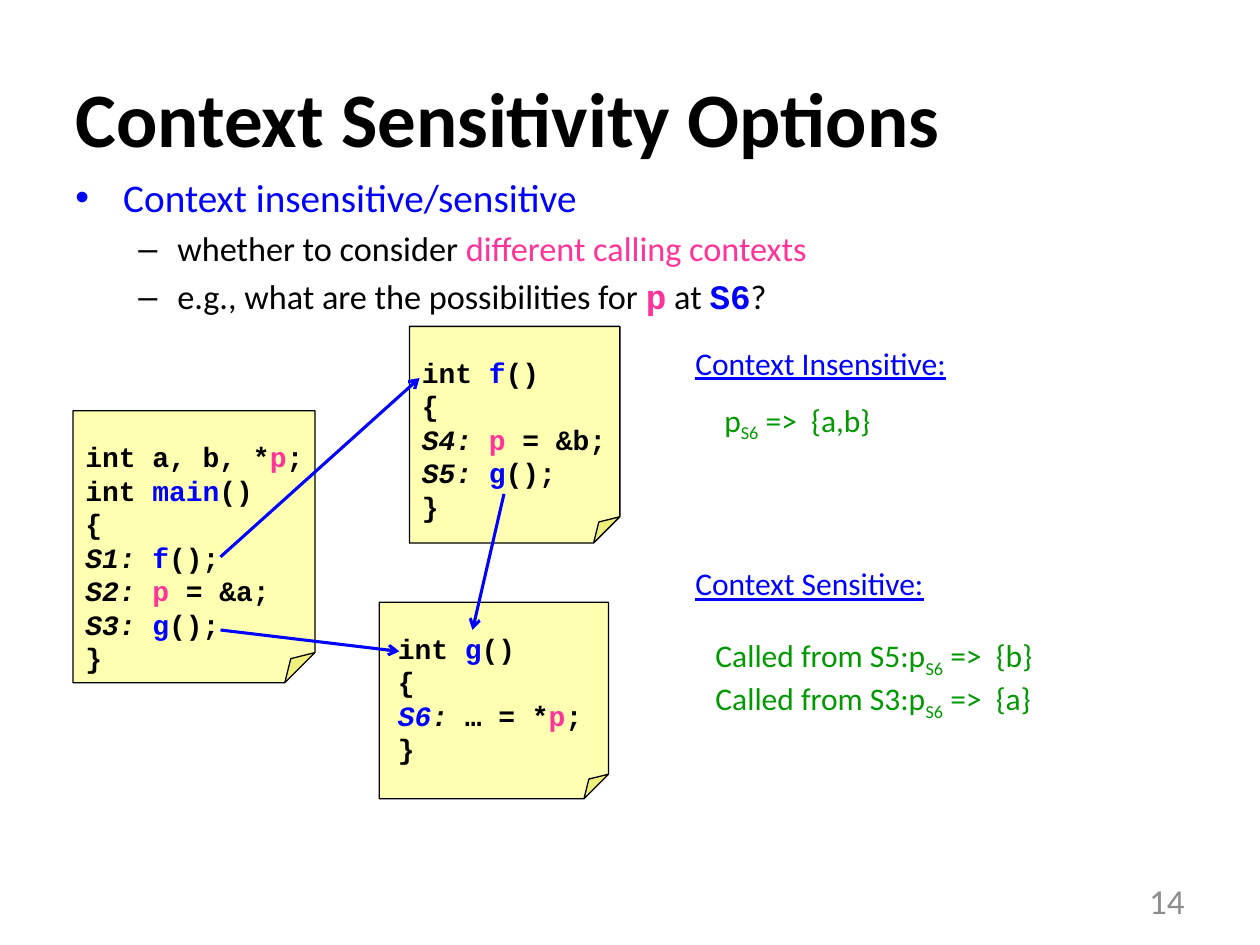
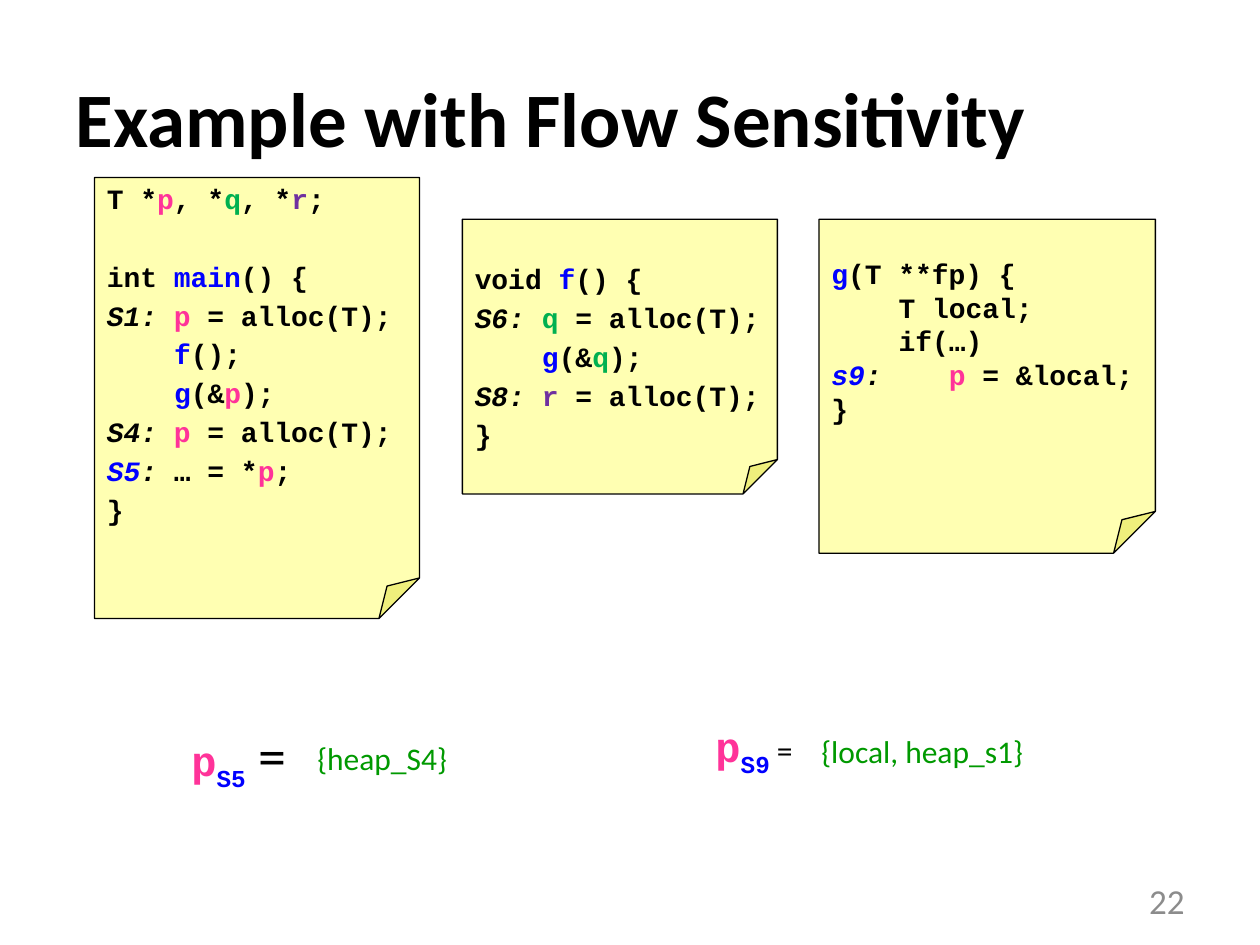
from lxml.etree import SubElement
from pptx import Presentation
from pptx.dml.color import RGBColor
from pptx.enum.shapes import MSO_CONNECTOR, MSO_SHAPE
from pptx.enum.text import MSO_ANCHOR, MSO_AUTO_SIZE, PP_ALIGN
from pptx.oxml.ns import qn
from pptx.util import Inches, Pt

WIDE, HIGH = Inches(10), Inches(7.5)
COLS, ROWS = 100, 75
SANS, MONO = "Calibri", "Courier New"
BLACK, BLUE, PINK, GREEN = "000000", "0000FF", "FF3399", "009900"
CODE = 16
PITCH = 19.3
CHAR = 0.6 * CODE

TONES = {
    "k": {"hue": BLACK},
    "b": {"hue": BLUE},
    "p": {"hue": PINK},
    "q": {"hue": "00B050"},
    "r": {"hue": "7030A0"},
    "i": {"hue": BLACK, "slant": True},
    "j": {"hue": BLUE, "slant": True},
    "text": {"hue": BLACK, "size": 19.6},
    "hot": {"hue": PINK, "size": 19.6},
    "var": {"hue": PINK, "size": 19.6, "face": MONO, "bold": True},
    "spot": {"hue": BLUE, "size": 19.6, "face": MONO, "bold": True},
    "lead": {"hue": BLUE, "size": 22.4},
    "head": {"hue": BLUE, "under": True},
    "set": {"hue": GREEN},
    "sub": {"hue": GREEN, "low": True},
    "big": {"hue": PINK, "size": 24, "face": MONO, "bold": True},
    "at": {"hue": BLUE, "size": 24, "face": MONO, "bold": True, "low": True},
    "eq32": {"hue": BLACK, "size": 32},
    "eq18": {"hue": BLACK},
    "title": {"hue": BLACK, "size": 44, "bold": True},
    "page": {"hue": "8C8C8C", "size": 20},
}

CONTEXT = {
    "title": "Context Sensitivity Options",
    "page": "14",
    "list": [
        ("•", 0.38, -0.38, 4.5, ("lead", "Context insensitive/sensitive")),
        ("–", 0.81, -0.31, 3.9, ("text", "whether to consider ",
                                 "hot", "different calling contexts")),
        ("–", 0.81, -0.31, 3.9, ("text", "e.g., what are the possibilities for ",
                                 "var", "p", "text", " at ", "spot", "S6", "text", "?")),
    ],
    "notes": [
        {"card": (5.8, 32.6, 19.2, 21.6), "box": (5.8, 31.7, 19.6, 22.6), "lead": 0, "rows": [
            (),
            ("k", "int a, b, *", "p", "p", "k", ";"),
            ("k", "int ", "b", "main", "k", "()"),
            ("k", "{"),
            ("i", "S1: ", "b", "f", "k", "();"),
            ("i", "S2: ", "p", "p", "k", " = &a;"),
            ("i", "S3: ", "b", "g", "k", "();"),
            ("k", "}")]},
        {"card": (32.5, 25.9, 16.7, 17.2), "box": (32.5, 25, 16.9, 17.8), "lead": 0, "rows": [
            (),
            ("k", "int ", "b", "f", "k", "()"),
            ("k", "{"),
            ("i", "S4: ", "p", "p", "k", " = &b;"),
            ("i", "S5: ", "b", "g", "k", "();"),
            ("k", "}")]},
        {"card": (30.1, 47.8, 18.2, 15.6), "box": (30.6, 46.9, 20.3, 14.8), "lead": 0, "rows": [
            (),
            ("k", "int ", "b", "g", "k", "()"),
            ("k", "{"),
            ("j", "S6", "i", ": ", "k", "… = *", "p", "p", "k", ";"),
            ("k", "}")]},
    ],
    "calls": [(17.5, 44.2, 33.3, 30), (17.5, 50, 31.7, 51.7), (40, 39.2, 37.5, 50)],
    "labels": [
        ((54.2, 26.8, 22.2, 4), [("head", "Context Insensitive:")]),
        ((54.2, 44.3, 20.5, 4), [("head", "Context Sensitive:")]),
        ((56.5, 31.3, 14, 4), [("set", "p", "sub", "S6", "set", " =>  {a,b}")]),
        ((55.8, 50, 29.2, 7.1), [
            ("set", "Called from S5:p", "sub", "S6", "set", " =>  {b}"),
            ("set", "Called from S3:p", "sub", "S6", "set", " =>  {a}")]),
    ],
}

FLOW = {
    "title": "Example with Flow Sensitivity",
    "page": "22",
    "list": [],
    "notes": [
        {"card": (7.5, 14.1, 25.8, 35), "box": (7.5, 13.9, 27.5, 28.6), "lead": 3, "rows": [
            ("k", "T *", "p", "p", "k", ", *", "q", "q", "k", ", *", "r", "r", "k", ";"),
            (),
            ("k", "int ", "b", "main", "k", "() {"),
            ("i", "S1: ", "p", "p", "k", " = alloc(T);"),
            (4, "b", "f", "k", "();"),
            (4, "b", "g", "k", "(&", "p", "p", "k", ");"),
            ("i", "S4: ", "p", "p", "k", " = alloc(T);"),
            ("j", "S5", "i", ": ", "k", "… = *", "p", "p", "k", ";"),
            ("k", "}")]},
        {"card": (36.7, 17.4, 25, 21.8), "box": (36.7, 17.2, 25, 19.3), "lead": 3, "rows": [
            (),
            ("k", "void ", "b", "f", "k", "() {"),
            ("i", "S6: ", "q", "q", "k", " = alloc(T);"),
            (4, "b", "g", "k", "(&", "q", "q", "k", ");"),
            ("i", "S8: ", "r", "r", "k", " = alloc(T);"),
            ("k", "}")]},
        {"card": (65, 17.4, 26.7, 26.5), "box": (65, 17.2, 26.7, 17.2), "lead": 0, "rows": [
            (),
            ("b", "g", "k", "(T **fp) {"),
            (4, "k", "T local;"),
            (4, "k", "if(…)"),
            ("j", "s9", "i", ":\t", "p", "p", "k", " = &local;"),
            ("k", "}")]},
    ],
    "calls": [],
    "labels": [
        ((14.2, 56.7, 24.2, 10), [("big", "p", "at", "S5", "eq32", " =")]),
        ((55.8, 56.7, 24.2, 10), [("big", "p", "at", "S9", "eq18", " =")]),
        ((24.2, 58.2, 12.4, 4), [("set", "{heap_S4}")]),
        ((64.2, 57.6, 18.2, 4), [("set", "{local, heap_s1}")]),
    ],
}


def paint(hue):
    return RGBColor.from_string(hue)


def spot(x, y):
    return round(WIDE * x / COLS), round(HIGH * y / ROWS)


def area(box):
    return spot(*box[:2]) + spot(*box[2:])


def write(para, row, size=18, face=SANS, bold=False):
    for key, text in zip(row[::2], row[1::2]):
        tone = TONES[key]
        run = para.add_run()
        run.text = text
        font = run.font
        font.name = tone.get("face", face)
        font.size = Pt(tone.get("size", size))
        font.bold = tone.get("bold", bold)
        font.italic = tone.get("slant", False)
        font.underline = tone.get("under", False)
        font.color.rgb = paint(tone["hue"])
        if tone.get("low"):
            run._r.get_or_add_rPr().set("baseline", "-25000")


def frame(shapes, box, wrap=True):
    text = shapes.add_textbox(*area(box)).text_frame
    text.word_wrap = wrap
    return text


def lines(text, count):
    return [text.paragraphs[0]] + [text.add_paragraph() for _ in range(count - 1)]


def indent(para, left, first=0):
    props = para._p.get_or_add_pPr()
    props.set("marL", str(int(left)))
    props.set("indent", str(int(first)))
    return props


def add_card(shapes, box):
    card = shapes.add_shape(MSO_SHAPE.FOLDED_CORNER, *area(box))
    fold = SubElement(card._element.spPr.find(".//" + qn("a:avLst")), qn("a:gd"))
    fold.set("name", "adj")
    fold.set("fmla", "val 12500")
    card.shadow.inherit = False
    card.fill.solid()
    card.fill.fore_color.rgb = paint("FFFF00")
    tint = card._element.spPr.find(qn("a:solidFill"))[0]
    SubElement(tint, qn("a:alpha")).set("val", "30000")
    card.line.color.rgb = paint(BLACK)
    card.line.width = Pt(0.75)


def add_note(slide, note):
    group = slide.shapes.add_group_shape().shapes
    add_card(group, note["card"])
    text = frame(group, note["box"])
    rows, lead = note["rows"], note["lead"]
    if not rows[0]:
        text.margin_top = Inches(0.05) + Pt(PITCH + lead)
    full = [n for n, row in enumerate(rows) if row]
    for para, n in zip(lines(text, len(full)), full):
        row = rows[n]
        if n > full[0]:
            skip = 0 if rows[n - 1] else PITCH + lead
            para.space_before = Pt(lead + skip)
        if isinstance(row[0], int):
            indent(para, Pt(row[0] * CHAR))
            row = row[1:]
        if any("\t" in part for part in row):
            tabs = SubElement(para._p.get_or_add_pPr(), qn("a:tabLst"))
            stop = SubElement(tabs, qn("a:tab"))
            stop.set("pos", str(int(Pt(7 * CHAR))))
            stop.set("algn", "l")
        write(para, row, CODE, MONO, True)


def add_list(slide, items):
    text = frame(slide.shapes, (5, 13.3, 90, 11.7))
    for para, (mark, left, first, gap, row) in zip(lines(text, len(items)), items):
        para.space_before = Pt(gap)
        props = indent(para, Inches(left), Inches(first))
        SubElement(props, qn("a:buFont")).set("typeface", "Arial")
        SubElement(props, qn("a:buChar")).set("char", mark)
        write(para, row)


def add_call(slide, ends):
    link = slide.shapes.add_connector(MSO_CONNECTOR.STRAIGHT, *area(ends))
    link.line.color.rgb = paint(BLUE)
    link.line.width = Pt(1.75)
    SubElement(link.line._get_or_add_ln(), qn("a:tailEnd")).set("type", "arrow")
    SubElement(link._element.spPr, qn("a:effectLst"))


def add_label(slide, box, rows):
    text = frame(slide.shapes, box, box[3] > 4)
    text.auto_size = MSO_AUTO_SIZE.SHAPE_TO_FIT_TEXT if box[3] < 10 else MSO_AUTO_SIZE.NONE
    for para, row in zip(lines(text, len(rows)), rows):
        write(para, row)


def add_base(deck, data):
    slide = deck.slides.add_slide(deck.slide_layouts[5])
    title = slide.shapes.title
    title.left, title.top, title.width, title.height = area((5, 3, 90, 12.5))
    text = title.text_frame
    text.auto_size = MSO_AUTO_SIZE.NONE
    text.vertical_anchor = MSO_ANCHOR.MIDDLE
    text.paragraphs[0].alignment = PP_ALIGN.LEFT
    write(text.paragraphs[0], ("title", data["title"]))
    page = frame(slide.shapes, (71.7, 69.5, 23.3, 4))
    page.vertical_anchor = MSO_ANCHOR.MIDDLE
    page.paragraphs[0].alignment = PP_ALIGN.RIGHT
    write(page.paragraphs[0], ("page", data["page"]))
    return slide


def main():
    deck = Presentation()
    deck.slide_width, deck.slide_height = WIDE, HIGH
    for data in (CONTEXT, FLOW):
        slide = add_base(deck, data)
        if data["list"]:
            add_list(slide, data["list"])
        for note in data["notes"]:
            add_note(slide, note)
        for ends in data["calls"]:
            add_call(slide, ends)
        for box, rows in data["labels"]:
            add_label(slide, box, rows)
    deck.save("out.pptx")


if __name__ == "__main__":
    main()
